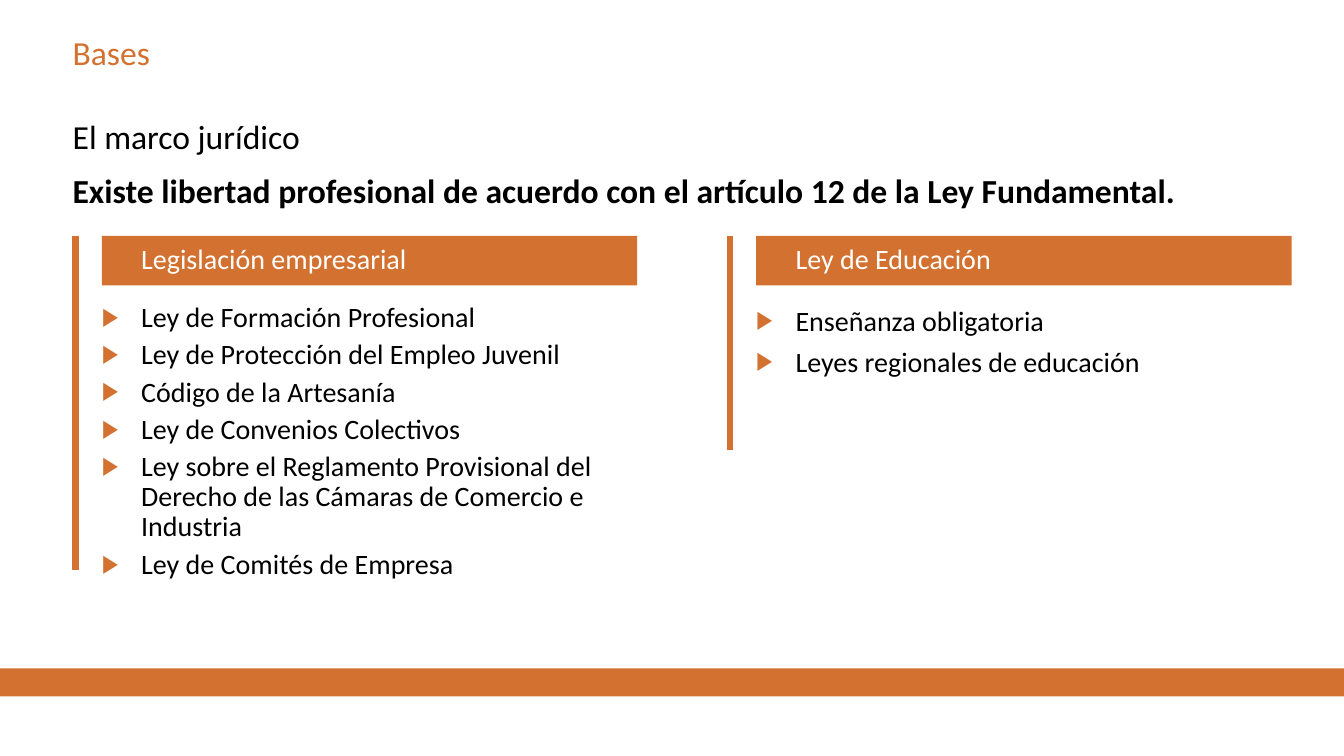
"""Build the slide on the legal bases of vocational training."""
from lxml.etree import SubElement
from pptx import Presentation
from pptx.dml.color import RGBColor
from pptx.enum.shapes import MSO_CONNECTOR, MSO_SHAPE
from pptx.enum.text import MSO_ANCHOR, MSO_AUTO_SIZE, PP_ALIGN
from pptx.oxml.ns import qn
from pptx.util import Pt

PX = 9144
ORANGE = RGBColor(0xD3, 0x72, 0x30)
BLACK = RGBColor(0, 0, 0)
WHITE = RGBColor(255, 255, 255)
INDENT = 39
COLUMN_TOP = 234

COLUMNS = [
    (75, 331, 0.9, "Legislación empresarial", [
        "Ley de Formación Profesional",
        "Ley de Protección del Empleo Juvenil",
        "Código de la Artesanía",
        "Ley de Convenios Colectivos",
        "Ley sobre el Reglamento Provisional del Derecho de las Cámaras "
        "de Comercio e Industria",
        "Ley de Comités de Empresa",
    ]),
    (724, 212, 1.0, "Ley de Educación", [
        "Enseñanza obligatoria",
        "Leyes regionales de educación",
    ]),
]


def place(sp, x, y, w, h):
    sp.left, sp.top, sp.width, sp.height = (v * PX for v in (x, y, w, h))


def set_frame(sp, anchor=MSO_ANCHOR.TOP, left=0):
    tf = sp.text_frame
    tf.auto_size = MSO_AUTO_SIZE.NONE
    tf.word_wrap = True
    tf.vertical_anchor = anchor
    tf.margin_left = left * PX
    tf.margin_right = tf.margin_top = tf.margin_bottom = 0


def add_bullet(p):
    pPr = p._p.get_or_add_pPr()
    pPr.set("marL", str(INDENT * PX))
    pPr.set("indent", str(-INDENT * PX))
    color = SubElement(pPr, qn("a:buClr"))
    SubElement(color, qn("a:srgbClr"), val=str(ORANGE))
    SubElement(pPr, qn("a:buSzPct"), val="90000")
    SubElement(pPr, qn("a:buFont"), typeface="Arial")
    SubElement(pPr, qn("a:buChar"), char="▶")


def write(sp, text, size=20, color=BLACK, bold=False, before=0, spacing=1.0,
          bullet=False):
    """Write text as the next paragraph of a shape."""
    tf = sp.text_frame
    p = tf.add_paragraph() if tf.text else tf.paragraphs[0]
    if bullet:
        add_bullet(p)
    p.alignment = PP_ALIGN.LEFT
    p.line_spacing = spacing
    p.space_before = Pt(before)
    r = p.add_run()
    r.text = text
    r.font.name = "Calibri"
    r.font.size = Pt(size)
    r.font.bold = bold
    r.font.color.rgb = color


def add_band(s):
    sp = s.shapes.add_shape(MSO_SHAPE.RECTANGLE, 0, 663 * PX, 1333 * PX, 28 * PX)
    sp.shadow.inherit = False
    sp.fill.solid()
    sp.fill.fore_color.rgb = ORANGE
    sp.line.fill.background()


def add_rule(s, x, y, length):
    line = s.shapes.add_connector(MSO_CONNECTOR.STRAIGHT, x * PX, y * PX,
                                  x * PX, (y + length) * PX)
    line.line.color.rgb = ORANGE
    line.line.width = Pt(4.5)
    SubElement(line._element.spPr, qn("a:effectLst"))


def fill_heading(sp, x, text):
    place(sp, x, COLUMN_TOP, 531, 49)
    sp.fill.solid()
    sp.fill.fore_color.rgb = ORANGE
    set_frame(sp, MSO_ANCHOR.MIDDLE, INDENT)
    write(sp, text, color=WHITE, spacing=0.9)


def fill_list(sp, x, items, spacing):
    place(sp, x, COLUMN_TOP + 67, 531, 286)
    set_frame(sp)
    for i, item in enumerate(items):
        write(sp, item, before=5 if i else 0, spacing=spacing, bullet=True)


def main():
    prs = Presentation()
    prs.slide_width, prs.slide_height = 1333 * PX, 750 * PX
    s = prs.slides.add_slide(prs.slide_layouts.get_by_name("Comparison"))
    title, *bodies = s.placeholders
    add_band(s)

    place(title, 72, 32, 984, 49)
    set_frame(title)
    write(title, "Bases", size=24, color=ORANGE)

    intro = s.shapes.add_textbox(72 * PX, 115 * PX, 1209 * PX, 110 * PX)
    set_frame(intro)
    write(intro, "El marco jurídico", size=24)
    write(intro, "Existe libertad profesional de acuerdo con el artículo 12 "
          "de la Ley Fundamental.", size=24, bold=True, before=10)

    for column, heading, body in zip(COLUMNS, bodies[::2], bodies[1::2]):
        rule_x, length, spacing, text, items = column
        fill_heading(heading, rule_x + 26, text)
        fill_list(body, rule_x + 26, items, spacing)
        add_rule(s, rule_x, COLUMN_TOP, length)

    prs.save("out.pptx")


if __name__ == "__main__":
    main()
